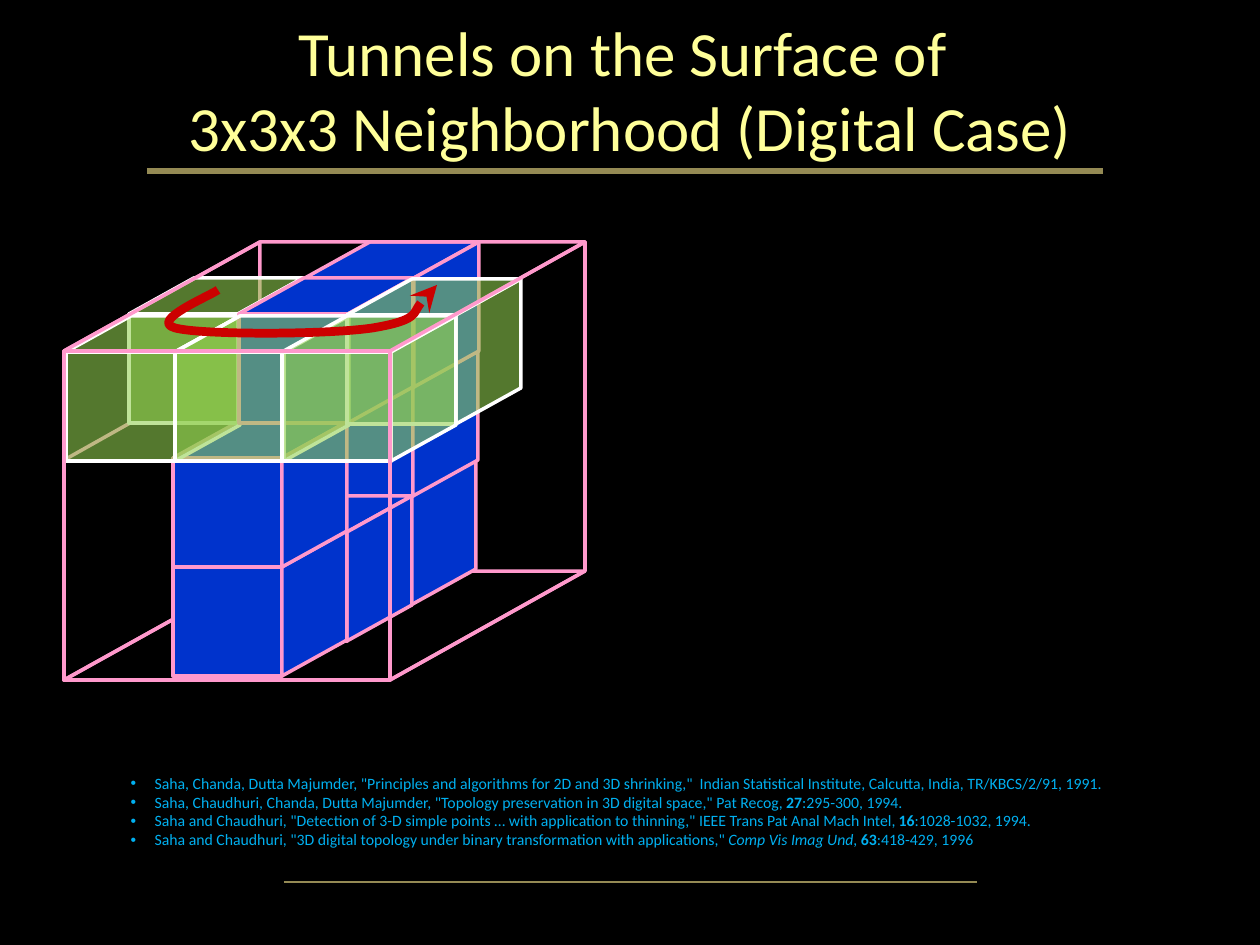
from lxml.etree import SubElement
from pptx import Presentation
from pptx.dml.color import RGBColor
from pptx.enum.shapes import MSO_CONNECTOR as CONNECTOR, MSO_SHAPE as SHAPE
from pptx.enum.text import MSO_ANCHOR as ANCHOR, MSO_AUTO_SIZE as AUTO_SIZE, PP_ALIGN as ALIGN
from pptx.oxml.ns import qn
from pptx.util import Pt

PX = 914400 / 126
FONT = "Calibri"
KHAKI, PINK, WHITE, RED = "948A54", "FF99CC", "FFFFFF", "CC0000"
BLUE, YELLOW, GREEN = "0033CC", "FFFF00", "92D050"
EDGE, DEPTH_X, DEPTH_Y = 109, 65, 36

REFERENCES = [
    [("Saha, Chanda, Dutta Majumder, \"Principles and algorithms for 2D and 3D shrinking,\"  "
      "Indian Statistical Institute, Calcutta, India, TR/KBCS/2/91, 1991.", "")],
    [("Saha, Chaudhuri, Chanda, Dutta Majumder, \"Topology preservation in 3D digital space,\" Pat Recog, ", ""),
     ("27", "bold"), (":295-300, 1994.", "")],
    [("Saha and Chaudhuri, \"Detection of 3-D simple points … with application to thinning,\" "
      "IEEE Trans Pat Anal Mach Intel, ", ""),
     ("16", "bold"), (":1028-1032, 1994.", "")],
    [("Saha and Chaudhuri, \"3D digital topology under binary transformation with applications,\" ", ""),
     ("Comp Vis Imag Und, ", "italic"), ("63", "bold"), (":418-429, 1996", "")],
]


def px(length):
    return round(length * PX)


def paint(color_format, value):
    color_format.rgb = RGBColor.from_string(value)


def stroke(outline, color, width):
    paint(outline.color, color)
    outline.width = Pt(width)


def style(shape, fill, outline, width=2, alpha=100):
    shape.shadow.inherit = False
    if fill:
        shape.fill.solid()
        paint(shape.fill.fore_color, fill)
        if alpha < 100:
            color = shape.fill._xPr.find(qn("a:solidFill"))[0]
            SubElement(color, qn("a:alpha"), val=str(alpha * 1000))
    else:
        shape.fill.background()
    stroke(shape.line, outline, width)
    SubElement(shape.line._ln, qn("a:round"))


def add_line(shapes, start, end, color, width):
    line = shapes.add_connector(CONNECTOR.STRAIGHT, *map(px, start + end))
    stroke(line.line, color, width)
    SubElement(line._element.spPr, qn("a:effectLst"))


def add_rectangle(shapes, left, top, width, height, fill, outline, alpha=100):
    face = shapes.add_shape(SHAPE.RECTANGLE, px(left), px(top), px(width), px(height))
    style(face, fill, outline, alpha=alpha)


def add_outline(shapes, points, close=True):
    builder = shapes.build_freeform(*points[0], scale=PX)
    builder.add_line_segments(points[1:], close=close)
    return builder.convert_to_shape()


def add_polygon(shapes, points, fill, outline, alpha=100):
    style(add_outline(shapes, points), fill, outline, alpha=alpha)


def add_curved_arrow(shapes, points, color, width):
    arrow = add_outline(shapes, points, close=False)
    style(arrow, None, color, width)
    SubElement(arrow.line._ln, qn("a:tailEnd"), type="stealth")
    segments = list(arrow._element.iter(qn("a:lnTo")))
    for first in range(0, len(segments), 3):
        triple = segments[first:first + 3]
        curve = SubElement(triple[0].getparent(), qn("a:cubicBezTo"))
        for segment in triple:
            curve.append(segment[0])
            segment.getparent().remove(segment)


def add_cube(shapes, x, y, front=BLUE, top=BLUE, side=BLUE, outline=PINK, alpha=100):
    cube = shapes.add_group_shape().shapes
    right, bottom = x + EDGE, y + EDGE
    back_right, back_top = right + DEPTH_X, y - DEPTH_Y
    add_rectangle(cube, x, y, EDGE, EDGE, front, outline, alpha)
    add_polygon(cube, [(x + DEPTH_X, back_top), (x, y), (right, y), (back_right, back_top)],
                top, outline, alpha)
    add_polygon(cube, [(back_right, bottom - DEPTH_Y), (right, bottom), (right, y), (back_right, back_top)],
                side, outline, alpha)


def add_green_cube(shapes, x, y):
    add_cube(shapes, x, y, GREEN, GREEN, GREEN, WHITE, 58)


def place(holder, left, top, width, height):
    holder.left, holder.top, holder.width, holder.height = map(px, (left, top, width, height))


def format_run(run, size, color):
    run.font.name = FONT
    run.font.size = Pt(size)
    paint(run.font.color, color)


def write_title(title):
    place(title, 63, 10, 1134, 158)
    frame = title.text_frame
    frame.text = "Tunnels on the Surface of \v3x3x3 Neighborhood (Digital Case)"
    frame.vertical_anchor = ANCHOR.MIDDLE
    frame.auto_size = AUTO_SIZE.NONE
    heading = frame.paragraphs[0]
    heading.alignment = ALIGN.CENTER
    for run in heading.runs:
        format_run(run, 36, "FFFF99")


def write_references(body):
    place(body, 118, 767, 1047, 89)
    frame = body.text_frame
    frame.word_wrap = True
    frame.auto_size = AUTO_SIZE.SHAPE_TO_FIT_TEXT
    for index, pieces in enumerate(REFERENCES):
        citation = frame.add_paragraph() if index else frame.paragraphs[0]
        citation.space_before = Pt(0)
        properties = citation._p.get_or_add_pPr()
        properties.set("marL", str(px(24)))
        properties.set("indent", str(-px(24)))
        SubElement(properties, qn("a:buChar"), char="•")
        for text, emphasis in pieces:
            run = citation.add_run()
            run.text = text
            format_run(run, 9, "00B0F0")
            if emphasis:
                setattr(run.font, emphasis, True)


def draw_neighborhood(shapes):
    left, right, back_left, back_right = 64, 390, 260, 585
    top, bottom, back_top, back_bottom = 351, 680, 242, 571

    add_line(shapes, (130, 423), (66, 459), PINK, 2)
    add_polygon(shapes, [(back_left, back_bottom), (left, bottom), (right, bottom), (back_right, back_bottom)],
                None, PINK)
    add_polygon(shapes, [(back_left, back_bottom), (left, bottom), (left, top), (back_left, back_top)],
                None, PINK)

    add_cube(shapes, 302, 496, front=YELLOW, top=YELLOW)
    add_cube(shapes, 304, 387)
    add_cube(shapes, 238, 532)
    add_cube(shapes, 173, 567, top=YELLOW)
    add_cube(shapes, 173, 458)
    add_cube(shapes, 305, 278)
    add_polygon(shapes, [(back_right, back_bottom), (right, bottom), (right, top), (back_right, back_top)],
                None, PINK)

    add_green_cube(shapes, 129, 314)
    add_green_cube(shapes, 66, 352)
    add_cube(shapes, 239, 314)
    for x, y in [(175, 352), (347, 315), (282, 352)]:
        add_green_cube(shapes, x, y)

    add_curved_arrow(shapes, [(218, 290), (210, 296), (149, 321), (175, 328),
                              (200, 335), (326, 335), (373, 328),
                              (420, 320), (423, 294), (437, 285)], RED, 5)
    add_rectangle(shapes, left, top, right - left, bottom - top, None, PINK)
    add_polygon(shapes, [(back_left, back_top), (left, top), (right, top), (back_right, back_top)],
                None, PINK)


def main():
    deck = Presentation()
    deck.slide_width, deck.slide_height = px(1260), px(945)
    slide = deck.slides.add_slide(deck.slide_layouts[1])
    slide.background.fill.solid()
    paint(slide.background.fill.fore_color, "000000")
    add_line(slide.shapes, (147, 171), (1103, 171), KHAKI, 3)
    add_line(slide.shapes, (284, 882), (977, 882), KHAKI, 1)
    write_title(slide.shapes.title)
    draw_neighborhood(slide.shapes)
    write_references(slide.placeholders[1])
    deck.save("out.pptx")


if __name__ == "__main__":
    main()
